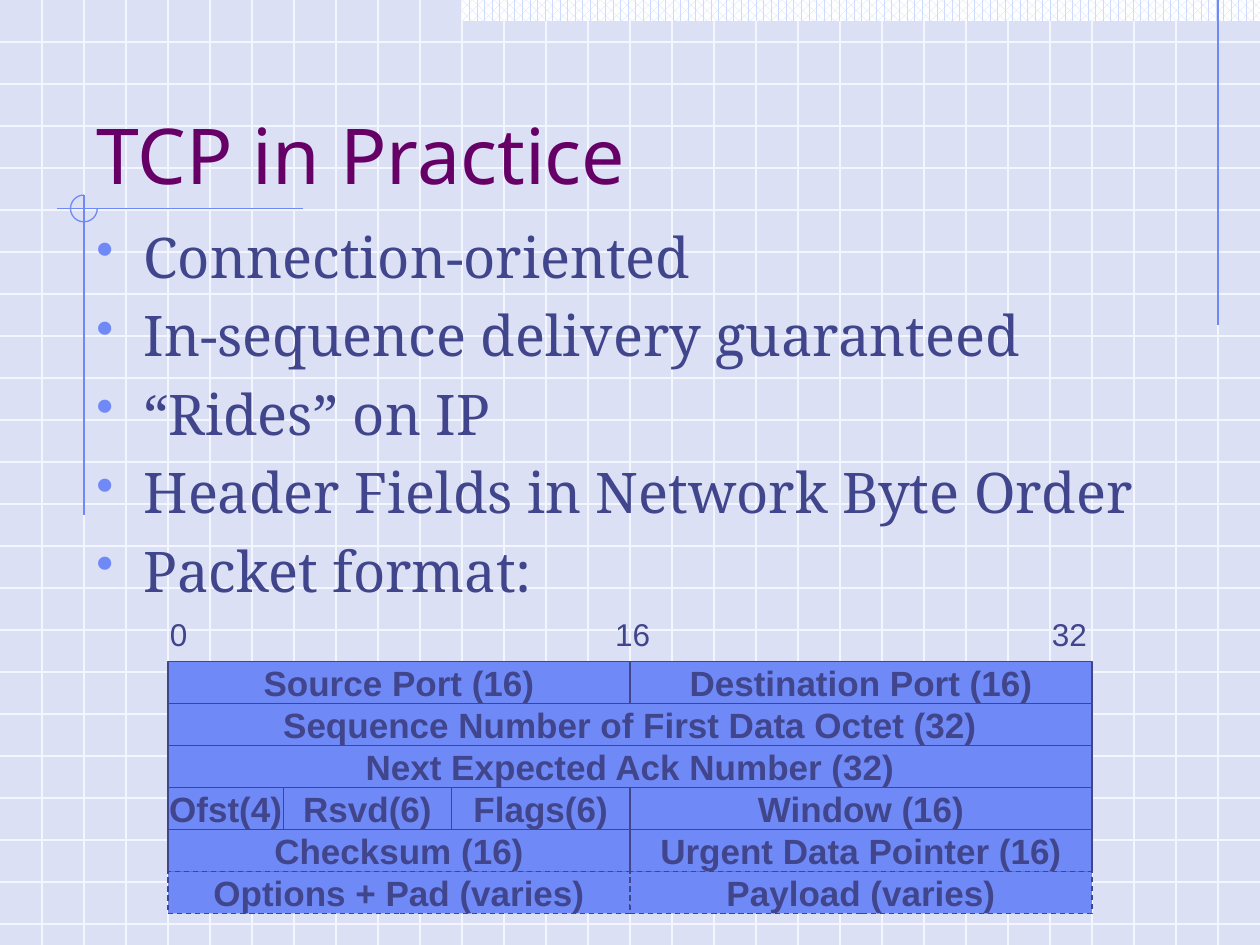
from lxml import etree
from pptx import Presentation
from pptx.dml.color import RGBColor
from pptx.enum.dml import MSO_LINE, MSO_PATTERN
from pptx.enum.shapes import MSO_CONNECTOR, MSO_SHAPE
from pptx.enum.text import MSO_ANCHOR, PP_ALIGN
from pptx.oxml.ns import qn
from pptx.util import Pt

WIDTH, HEIGHT = 720, 540
GRID_STEP = 24
BACKGROUND, GRID, PATTERN = "DBE0F5", "F3F6FE", "CFDBFD"
ACCENT, INK, TITLE_INK, WHITE = "6F89F7", "40458C", "660066", "FFFFFF"

BULLETS = [
    "Connection-oriented",
    "In-sequence delivery guaranteed",
    "“Rides” on IP",
    "Header Fields in Network Byte Order",
    "Packet format:",
]
# Each row holds (label, width in points) pairs.
PACKET_ROWS = [
    [("Source Port (16)", 264), ("Destination Port (16)", 264)],
    [("Sequence Number of First Data Octet (32)", 528)],
    [("Next Expected Ack Number (32)", 528)],
    [("Ofst(4)", 66), ("Rsvd(6)", 96), ("Flags(6)", 102), ("Window (16)", 264)],
    [("Checksum (16)", 264), ("Urgent Data Pointer (16)", 264)],
    [("Options + Pad (varies)", 264), ("Payload (varies)", 264)],
]


def color(value):
    return RGBColor.from_string(value)


def set_all(target, **values):
    for name, value in values.items():
        setattr(target, name, value)


def style_font(font, name, size, ink, bold=False):
    set_all(font, name=name, size=Pt(size), bold=bold)
    font.color.rgb = color(ink)


def add_line(page, x1, y1, x2, y2, ink):
    line = page.shapes.add_connector(
        MSO_CONNECTOR.STRAIGHT, Pt(x1), Pt(y1), Pt(x2), Pt(y2))
    line.line.color.rgb = color(ink)
    line.line.width = Pt(0.75)
    etree.SubElement(line._element.spPr, qn("a:effectLst"))


def add_shape(page, kind, left, top, width, height):
    shape = page.shapes.add_shape(kind, Pt(left), Pt(top), Pt(width), Pt(height))
    shape.shadow.inherit = False
    return shape


def add_text_box(page, left, top, width, height):
    box = page.shapes.add_textbox(Pt(left), Pt(top), Pt(width), Pt(height))
    box.text_frame.word_wrap = True
    return box.text_frame


def add_grid(page, width, height):
    for y in range(GRID_STEP, height, GRID_STEP):
        add_line(page, 0, y, width, y, GRID)
    for x in range(GRID_STEP, width, GRID_STEP):
        add_line(page, x, 0, x, height, GRID)


def add_ornaments(page):
    """Add the patterned top band, the accent lines and the open circle."""
    band = add_shape(page, MSO_SHAPE.RECTANGLE, 264, 0, 456, 12)
    band.fill.patterned()
    band.fill.pattern = MSO_PATTERN.PERCENT_60
    band.fill.fore_color.rgb = color(PATTERN)
    band.fill.back_color.rgb = color(WHITE)
    band.line.fill.background()

    add_line(page, 696, 0, 696, 186, ACCENT)
    add_line(page, 32.5, 119.2, 173, 119.2, ACCENT)
    add_line(page, 48, 111.5, 48, 294.5, ACCENT)

    circle = add_shape(page, MSO_SHAPE.ARC, 40.3, 111.5, 15.3, 15.3)
    circle.adjustments[0] = 0
    circle.adjustments[1] = 162
    circle.fill.background()
    circle.line.color.rgb = color(ACCENT)
    circle.line.width = Pt(0.75)


def add_title(page, left, top, width, height):
    frame = add_text_box(page, left, top, width, height)
    set_all(frame, vertical_anchor=MSO_ANCHOR.BOTTOM, margin_bottom=0)
    para = frame.paragraphs[0]
    para.text = "TCP in Practice"
    style_font(para.font, "Noto Sans", 44, TITLE_INK)


def add_bullet(para):
    properties = para._p.get_or_add_pPr()
    properties.set("marL", str(Pt(27)))
    properties.set("indent", str(-Pt(27)))
    bullet_color = etree.SubElement(properties, qn("a:buClr"))
    etree.SubElement(bullet_color, qn("a:srgbClr"), val=ACCENT)
    etree.SubElement(properties, qn("a:buSzPct"), val="90000")
    etree.SubElement(properties, qn("a:buChar"), char="•")


def add_bullets(page, left, top, width, height):
    frame = add_text_box(page, left, top, width, height)
    for index, text in enumerate(BULLETS):
        para = frame.add_paragraph() if index else frame.paragraphs[0]
        para.text = text
        para.line_spacing = Pt(41.8)
        if index:
            para.space_before = Pt(3.1)
        add_bullet(para)
        style_font(para.font, "Noto Serif", 32, INK)


def add_bit_scale(page, left, top, width, height):
    para = add_text_box(page, left, top, width, height).paragraphs[0]
    para.text = "0\t16\t32"
    tabs = etree.SubElement(para._p.get_or_add_pPr(), qn("a:tabLst"))
    for position, align in ((width / 2 - 5.5, "ctr"), (width - 16, "r")):
        etree.SubElement(tabs, qn("a:tab"), pos=str(Pt(position)), algn=align)
    style_font(para.font, "Arial", 18, INK)


def add_field(page, text, left, top, width, height, dashed):
    field = add_shape(page, MSO_SHAPE.RECTANGLE, left, top, width, height)
    field.fill.solid()
    field.fill.fore_color.rgb = color(ACCENT)
    field.line.color.rgb = color(INK)
    field.line.width = Pt(0.75)
    if dashed:
        field.line.dash_style = MSO_LINE.DASH
    frame = field.text_frame
    set_all(frame, word_wrap=False, vertical_anchor=MSO_ANCHOR.MIDDLE,
            margin_left=0, margin_right=0, margin_top=0, margin_bottom=0)
    para = frame.paragraphs[0]
    para.text = text
    para.alignment = PP_ALIGN.CENTER
    style_font(para.font, "Arial", 20, INK, bold=True)


def add_packet(page, left, top, row_height):
    for index, row in enumerate(PACKET_ROWS):
        x = left
        for text, width in row:
            add_field(page, text, x, top + index * row_height, width, row_height,
                      dashed=row is PACKET_ROWS[-1])
            x += width


def main():
    deck = Presentation()
    set_all(deck, slide_width=Pt(WIDTH), slide_height=Pt(HEIGHT))
    page = deck.slides.add_slide(deck.slide_layouts[6])
    page.background.fill.solid()
    page.background.fill.fore_color.rgb = color(BACKGROUND)
    add_grid(page, WIDTH, HEIGHT)
    add_ornaments(page)
    add_title(page, 48, 24, 612, 90)
    add_bullets(page, 48, 120, 612, 324)
    add_bit_scale(page, 90, 348, 540, 29)
    add_packet(page, 96, 378, 24)
    deck.save("out.pptx")


if __name__ == "__main__":
    main()
